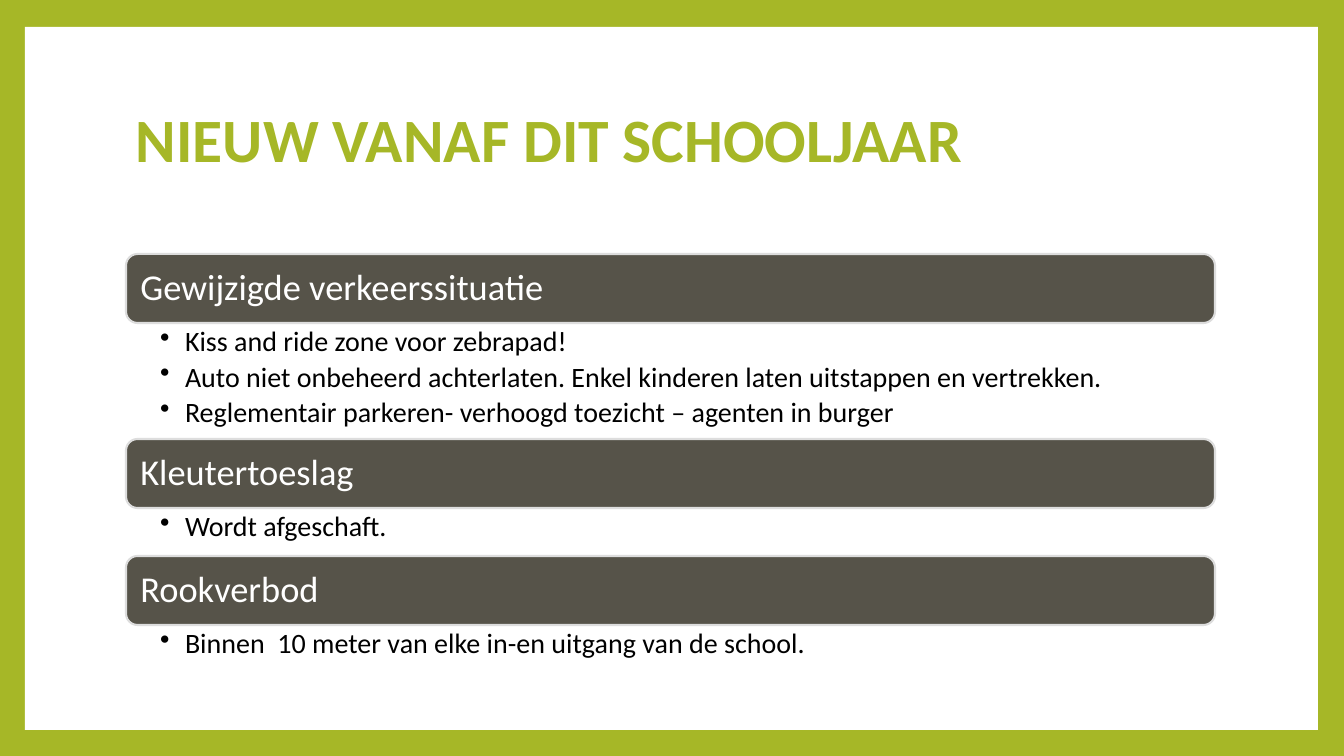
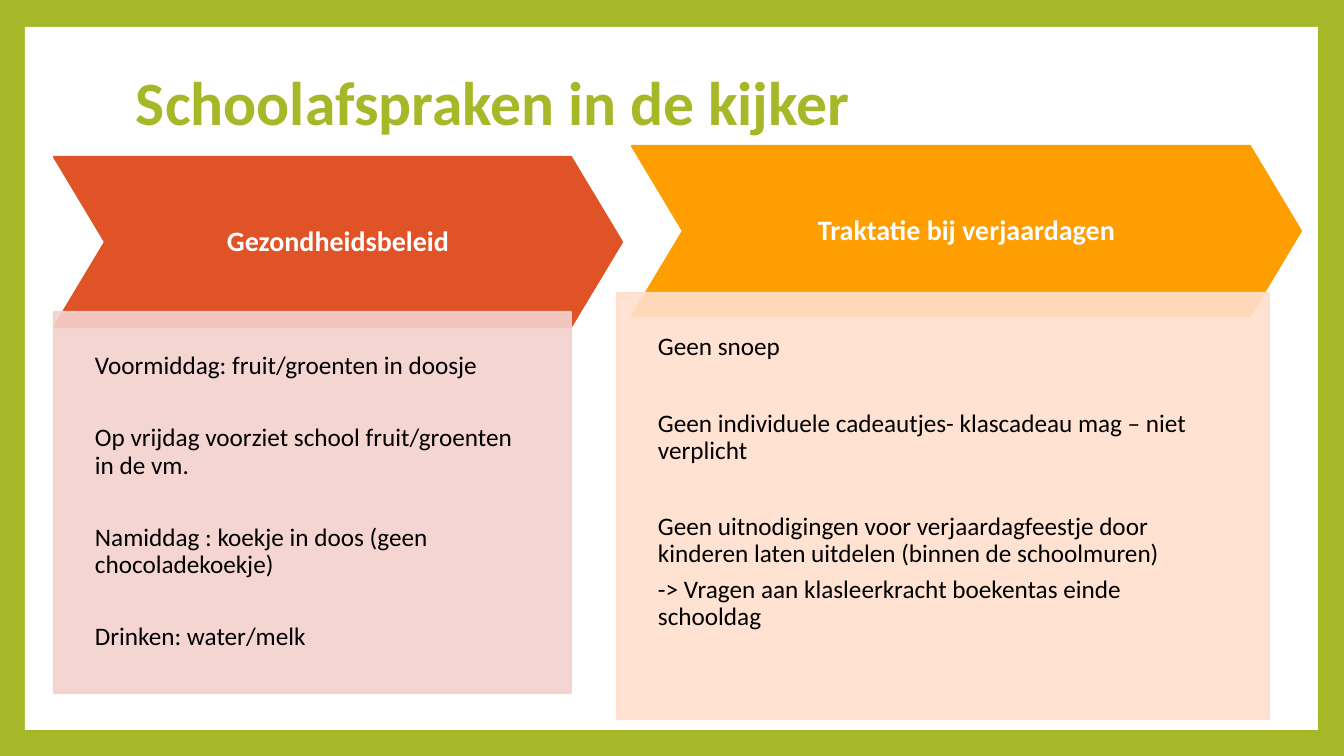
from dataclasses import dataclass

from lxml.etree import SubElement
from pptx import Presentation
from pptx.dml.color import RGBColor
from pptx.enum.shapes import MSO_SHAPE as Shape
from pptx.enum.text import MSO_ANCHOR as Anchor, PP_ALIGN as Align
from pptx.oxml.ns import qn
from pptx.util import Pt

PX = 914400 / 100.8


@dataclass(frozen=True)
class Theme:
    font: str = "Calibri"
    green: str = "A6B727"
    white: str = "FFFFFF"
    black: str = "000000"
    bar: str = "565349"
    bar_line: str = "DDDDDD"
    title: int = 44
    heading: int = 26
    body: int = 20
    panel: int = 18
    line_spacing: float = 0.9
    line_width: float = 1.5
    panel_alpha: int = 90


T = Theme()

NEWS_TITLE = "NIEUW VANAF DIT SCHOOLJAAR"
NEWS = [
    ("Gewijzigde verkeerssituatie", [
        "Kiss and ride zone voor zebrapad!",
        "Auto niet onbeheerd achterlaten. Enkel kinderen laten uitstappen en vertrekken.",
        "Reglementair parkeren- verhoogd toezicht – agenten in burger",
    ]),
    ("Kleutertoeslag", ["Wordt afgeschaft."]),
    ("Rookverbod", ["Binnen  10 meter van elke in-en uitgang van de school."]),
]

RULES_TITLE = "Schoolafspraken in de kijker"
# Each line of a panel comes with the space after it, in points.
RULES = [
    dict(heading="Gezondheidsbeleid", arrow=(54, 157, 568, 170), arrow_color="DF5327",
         panel=(54, 312, 517, 381), panel_color="F3D1CD", lines=[
             ("Voormiddag: fruit/groenten in doosje", 32),
             ("Op vrijdag voorziet school fruit/groenten in de vm.", 32),
             ("Namiddag : koekje in doos (geen chocoladekoekje)", 32),
             ("Drinken: water/melk", 0)]),
    dict(heading="Traktatie bij verjaardagen", arrow=(632, 146, 669, 170), arrow_color="FE9E00",
         panel=(617, 293, 652, 426), panel_color="FFDFCC", lines=[
             ("Geen snoep", 35),
             ("Geen individuele cadeautjes- klascadeau mag – niet verplicht", 35),
             ("Geen uitnodigingen voor verjaardagfeestje door kinderen laten uitdelen "
              "(binnen de schoolmuren)", 6),
             ("-> Vragen aan klasleerkracht boekentas einde schooldag", 0)]),
]

LEFT, WIDTH = 126, 1089
NEWS_TOP, BAR_HEIGHT = 254, 69
BULLET_PITCH, BULLET_PADDING = 34, 14
BULLET_INDENT = 25


def emu(px):
    return round(px * PX)


def rgb(color):
    return RGBColor.from_string(color)


def add_box(slide, kind, box, fill, line=None, alpha=None):
    s = slide.shapes.add_shape(kind, *map(emu, box))
    s.shadow.inherit = False
    s.fill.solid()
    s.fill.fore_color.rgb = rgb(fill)
    if line:
        s.line.color.rgb = rgb(line)
        s.line.width = Pt(T.line_width)
    else:
        s.line.fill.background()
    if alpha:
        for color in s._element.spPr.iter(qn("a:srgbClr")):
            SubElement(color, qn("a:alpha"), val=str(alpha * 1000))
    return s


def add_text_box(slide, box):
    return slide.shapes.add_textbox(*map(emu, box))


def add_bullet(p):
    pPr = p._p.get_or_add_pPr()
    pPr.set("marL", str(emu(BULLET_INDENT)))
    pPr.set("indent", str(-emu(BULLET_INDENT)))
    SubElement(pPr, qn("a:buChar"), char="•")


def write(s, lines, size, color, bold=False, align=Align.LEFT, anchor=Anchor.MIDDLE,
          insets=(10, 5, 10, 5), bullets=False):
    """Fill a shape with (text, points after) lines; insets are left, top, right, bottom."""
    tf = s.text_frame
    tf.word_wrap = True
    tf.vertical_anchor = anchor
    tf.margin_left, tf.margin_top, tf.margin_right, tf.margin_bottom = map(emu, insets)
    for i, (text, after) in enumerate(lines):
        p = tf.add_paragraph() if i else tf.paragraphs[0]
        p.alignment = align
        p.line_spacing = T.line_spacing
        p.space_after = Pt(after)
        if bullets:
            add_bullet(p)
        r = p.add_run()
        r.text = text
        r.font.name = T.font
        r.font.size = Pt(size)
        r.font.bold = bold
        r.font.color.rgb = rgb(color)


def add_framed_slide(prs, title, title_top):
    slide = prs.slides.add_slide(prs.slide_layouts[6])
    add_box(slide, Shape.RECTANGLE, (25, 27, 1293, 703), T.white)
    write(add_text_box(slide, (LEFT, title_top, WIDTH, 149)), [(title, 0)],
          T.title, T.green, bold=True)
    return slide


def build_news(prs):
    slide = add_framed_slide(prs, NEWS_TITLE, 68)
    top = NEWS_TOP
    for heading, items in NEWS:
        bar = add_box(slide, Shape.ROUNDED_RECTANGLE, (LEFT, top, WIDTH, BAR_HEIGHT),
                      T.bar, T.bar_line)
        write(bar, [(heading, 0)], T.heading, T.white, insets=(11, 11, 11, 11))
        top += BAR_HEIGHT
        height = BULLET_PITCH * len(items) + BULLET_PADDING
        write(add_text_box(slide, (LEFT, top, WIDTH, height)), [(item, 4) for item in items],
              T.body, T.black, anchor=Anchor.TOP, insets=(34, 4, 20, 4), bullets=True)
        top += height


def build_rules(prs):
    slide = add_framed_slide(prs, RULES_TITLE, 31)
    for rule in RULES:
        arrow = add_box(slide, Shape.CHEVRON, rule["arrow"], rule["arrow_color"],
                        rule["arrow_color"])
        arrow.adjustments[0] = 0.3
        write(arrow, [(rule["heading"], 0)], T.body, T.white, bold=True, align=Align.CENTER)
        panel = add_box(slide, Shape.RECTANGLE, rule["panel"], rule["panel_color"],
                        rule["panel_color"], T.panel_alpha)
        write(panel, rule["lines"], T.panel, T.black, anchor=Anchor.TOP,
              insets=(41, 41, 41, 41))


def main():
    prs = Presentation()
    prs.slide_width, prs.slide_height = emu(1344), emu(756)
    background = prs.slide_master.background.fill
    background.solid()
    background.fore_color.rgb = rgb(T.green)
    build_news(prs)
    build_rules(prs)
    prs.save("out.pptx")


if __name__ == "__main__":
    main()
